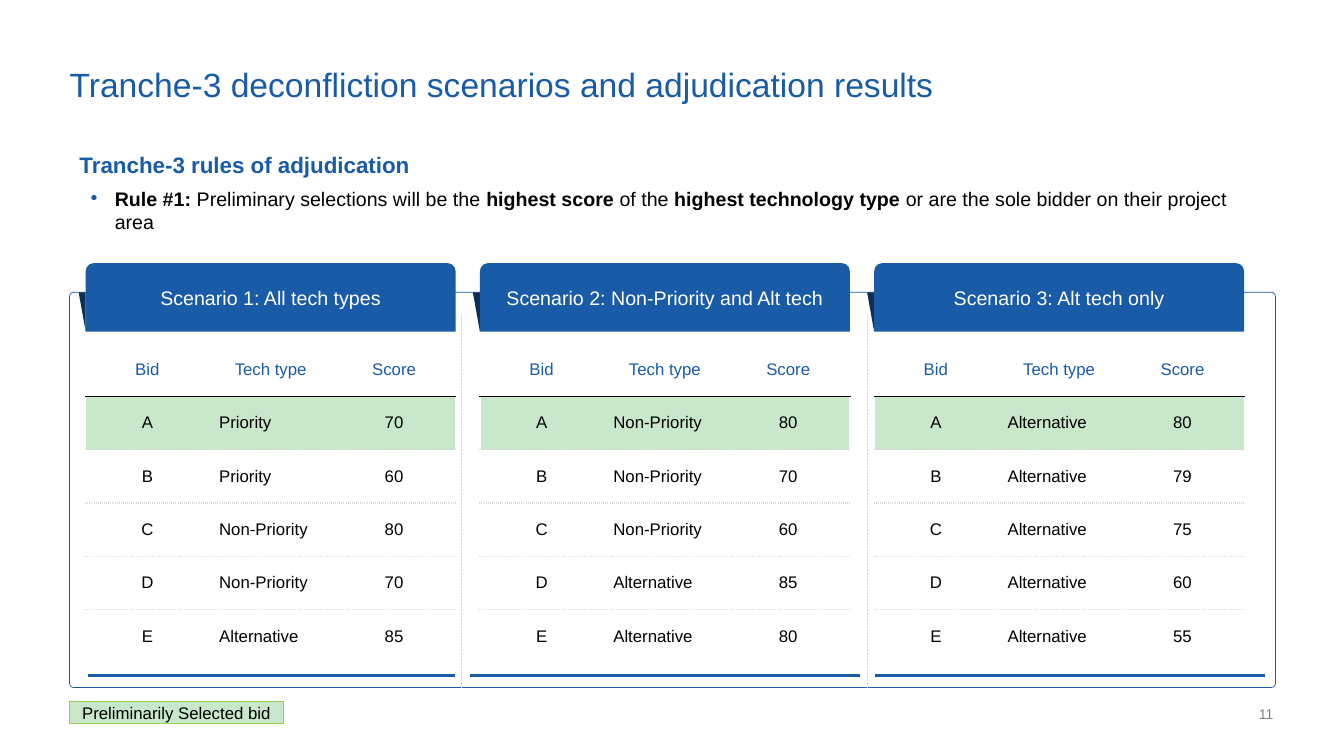
from lxml import etree
from pptx import Presentation
from pptx.dml.color import RGBColor
from pptx.enum.dml import MSO_LINE
from pptx.enum.shapes import MSO_CONNECTOR, MSO_SHAPE
from pptx.enum.text import MSO_ANCHOR, PP_ALIGN
from pptx.oxml.ns import qn
from pptx.util import Inches, Pt

BLUE, NAVY, GREEN, LIME = "1A5BA7", "0D2D54", "C9E7CA", "92D050"
INK, GRAY, RULE_GRAY, WHITE = "020101", "808080", "D9D9D9", "FFFFFF"

HEADINGS = ("Bid", "Tech type", "Score")
SCENARIOS = [
    ("Scenario 1: All tech types", (0.87, 4.51),
     [("A", "Priority", 70), ("B", "Priority", 60), ("C", "Non-Priority", 80),
      ("D", "Non-Priority", 70), ("E", "Alternative", 85)]),
    ("Scenario 2: Non-Priority and Alt tech", (4.66, 8.53),
     [("A", "Non-Priority", 80), ("B", "Non-Priority", 70), ("C", "Non-Priority", 60),
      ("D", "Alternative", 85), ("E", "Alternative", 80)]),
    ("Scenario 3: Alt tech only", (8.68, 12.55),
     [("A", "Alternative", 80), ("B", "Alternative", 79), ("C", "Alternative", 75),
      ("D", "Alternative", 60), ("E", "Alternative", 55)]),
]
RULE = [("Rule #1: ", True), ("Preliminary selections will be the ", False),
        ("highest score ", True), ("of the ", False),
        ("highest technology type ", True),
        ("or are the sole bidder on their project area", False)]
LEFT, PITCH, WIDTH, ROW_HEIGHT = 0.85, 3.91, 3.67, 0.53


def rgb(color):
    return RGBColor.from_string(color)


def add_border(cell, side, color=None, dash="solid"):
    """Give one side (L, R, T or B) a 1 pt border, or none without a colour."""
    border = etree.SubElement(cell._tc.get_or_add_tcPr(), qn(f"a:ln{side}"), w=str(Pt(1)))
    if color is None:
        etree.SubElement(border, qn("a:noFill"))
        return
    fill = etree.SubElement(border, qn("a:solidFill"))
    etree.SubElement(fill, qn("a:srgbClr"), val=color)
    etree.SubElement(border, qn("a:prstDash"), val=dash)


def add_bullet(paragraph, color, margin, indent):
    properties = paragraph._p.get_or_add_pPr()
    properties.set("marL", str(Inches(margin)))
    properties.set("indent", str(Inches(indent)))
    bullet_color = etree.SubElement(properties, qn("a:buClr"))
    etree.SubElement(bullet_color, qn("a:srgbClr"), val=color)
    etree.SubElement(properties, qn("a:buFont"), typeface="Arial")
    etree.SubElement(properties, qn("a:buChar"), char="•")


class SlideBuilder:
    def __init__(self, slide, font_name):
        self.slide = slide
        self.font_name = font_name

    def style(self, paragraph, size, color, align=PP_ALIGN.LEFT, bold=None, spacing=None):
        paragraph.alignment = align
        if spacing:
            paragraph.line_spacing = spacing
        font = paragraph.font
        font.name, font.size, font.bold = self.font_name, Pt(size), bold
        font.color.rgb = rgb(color)

    def text(self, left, top, width, height, text, size, color, inset=0,
             anchor=MSO_ANCHOR.TOP, **style):
        box = self.slide.shapes.add_textbox(*map(Inches, (left, top, width, height)))
        frame = box.text_frame
        frame.word_wrap = True
        frame.vertical_anchor = anchor
        frame.margin_left = frame.margin_right = Inches(inset)
        frame.margin_top = frame.margin_bottom = Inches(inset / 2)
        frame.text = text
        self.style(frame.paragraphs[0], size, color, **style)
        return frame

    def shape(self, kind, left, top, width, height, fill=None, line=None,
              line_width=0.5, adjust=()):
        shape = self.slide.shapes.add_shape(kind, *map(Inches, (left, top, width, height)))
        shape.shadow.inherit = False
        for index, value in enumerate(adjust):
            shape.adjustments[index] = value
        if fill:
            shape.fill.solid()
            shape.fill.fore_color.rgb = rgb(fill)
        else:
            shape.fill.background()
        if line:
            shape.line.color.rgb = rgb(line)
            shape.line.width = Pt(line_width)
        else:
            shape.line.fill.background()
        return shape

    def label(self, shape, text, size, color, inset=0.05, spacing=None):
        frame = shape.text_frame
        frame.word_wrap = True
        frame.vertical_anchor = MSO_ANCHOR.MIDDLE
        frame.margin_left = frame.margin_right = Inches(inset)
        frame.margin_top = frame.margin_bottom = Inches(0.05)
        frame.text = text
        self.style(frame.paragraphs[0], size, color, PP_ALIGN.CENTER, spacing=spacing)

    def line(self, x1, y1, x2, y2, color, width, dash=None):
        line = self.slide.shapes.add_connector(
            MSO_CONNECTOR.STRAIGHT, *map(Inches, (x1, y1, x2, y2)))
        line.line.color.rgb = rgb(color)
        line.line.width = Pt(width)
        if dash:
            line.line.dash_style = dash
        etree.SubElement(line._element.spPr, qn("a:effectLst"))

    def bid_table(self, left, top, bids):
        rows = [HEADINGS, *bids]
        table = self.slide.shapes.add_table(
            len(rows), len(HEADINGS), Inches(left), Inches(top),
            Inches(WIDTH), Inches(ROW_HEIGHT * len(rows))).table
        table.first_row = table.horz_banding = False
        dotted = (RULE_GRAY, "sysDot")
        edges = [(WHITE,), (INK,)] + [dotted] * (len(bids) - 1) + [(WHITE,)]
        for r, row in enumerate(rows):
            for c, value in enumerate(row):
                cell = table.cell(r, c)
                cell.vertical_anchor = MSO_ANCHOR.MIDDLE
                add_border(cell, "L", WHITE if c == 0 else None)
                add_border(cell, "R", WHITE if c == len(row) - 1 else None)
                add_border(cell, "T", *edges[r])
                add_border(cell, "B", *edges[r + 1])
                if r == 1:
                    cell.fill.solid()
                    cell.fill.fore_color.rgb = rgb(GREEN)
                else:
                    cell.fill.background()
                cell.text = str(value)
                align = PP_ALIGN.LEFT if r and c == 1 else PP_ALIGN.CENTER
                self.style(cell.text_frame.paragraphs[0], 12, INK if r else BLUE, align)

    def rules(self):
        frame = self.text(0.69, 1.45, 11.96, 0.69, "Tranche-3 rules of adjudication",
                          16, BLUE, inset=0.1, bold=True)
        frame.paragraphs[0].space_after = Pt(6)
        rule = frame.add_paragraph()
        rule.space_after = Pt(3)
        add_bullet(rule, BLUE, 0.35, -0.24)
        self.style(rule, 14, INK)
        for text, bold in RULE:
            run = rule.add_run()
            run.text = text
            run.font.bold = bold

    def scenario(self, left, title, underline, bids):
        fold = self.shape(MSO_SHAPE.ISOSCELES_TRIANGLE, left - 0.07, 2.9, 0.07, 0.39,
                          NAVY, adjust=(0,))
        fold.rotation = 180
        header = self.shape(MSO_SHAPE.ROUND_2_SAME_RECTANGLE, left, 2.61, WIDTH, 0.68,
                            BLUE, adjust=(0.12, 0))
        self.label(header, title, 14, WHITE, spacing=0.95)
        start, end = underline
        self.line(start, 6.7, end, 6.7, BLUE, 2.25)
        self.bid_table(left, 3.4, bids)


def main():
    presentation = Presentation()
    presentation.slide_width = Inches(13.33)
    presentation.slide_height = Inches(7.5)
    slide = presentation.slides.add_slide(presentation.slide_layouts[6])
    builder = SlideBuilder(slide, "Arial")

    builder.text(12.21, 7, 0.42, 0.17, "11", 10, GRAY,
                 anchor=MSO_ANCHOR.BOTTOM, align=PP_ALIGN.RIGHT)
    builder.shape(MSO_SHAPE.ROUNDED_RECTANGLE, 0.69, 2.9, 11.96, 3.92,
                  line=BLUE, adjust=(0.01,))
    builder.text(0.69, 0.68, 11.96, 0.36,
                 "Tranche-3 deconfliction scenarios and adjudication results",
                 24, BLUE, spacing=0.9)
    builder.rules()
    for divider in (4.58, 8.6):
        builder.line(divider, 3.12, divider, 6.82, RULE_GRAY, 0.5, MSO_LINE.ROUND_DOT)
    for index, (title, underline, bids) in enumerate(SCENARIOS):
        builder.scenario(LEFT + PITCH * index, title, underline, bids)
    legend = builder.shape(MSO_SHAPE.RECTANGLE, 0.69, 6.96, 2.12, 0.22, GREEN, LIME, 0.75)
    builder.label(legend, "Preliminarily Selected bid", 12, INK, inset=0.1)

    presentation.save("out.pptx")


if __name__ == "__main__":
    main()
